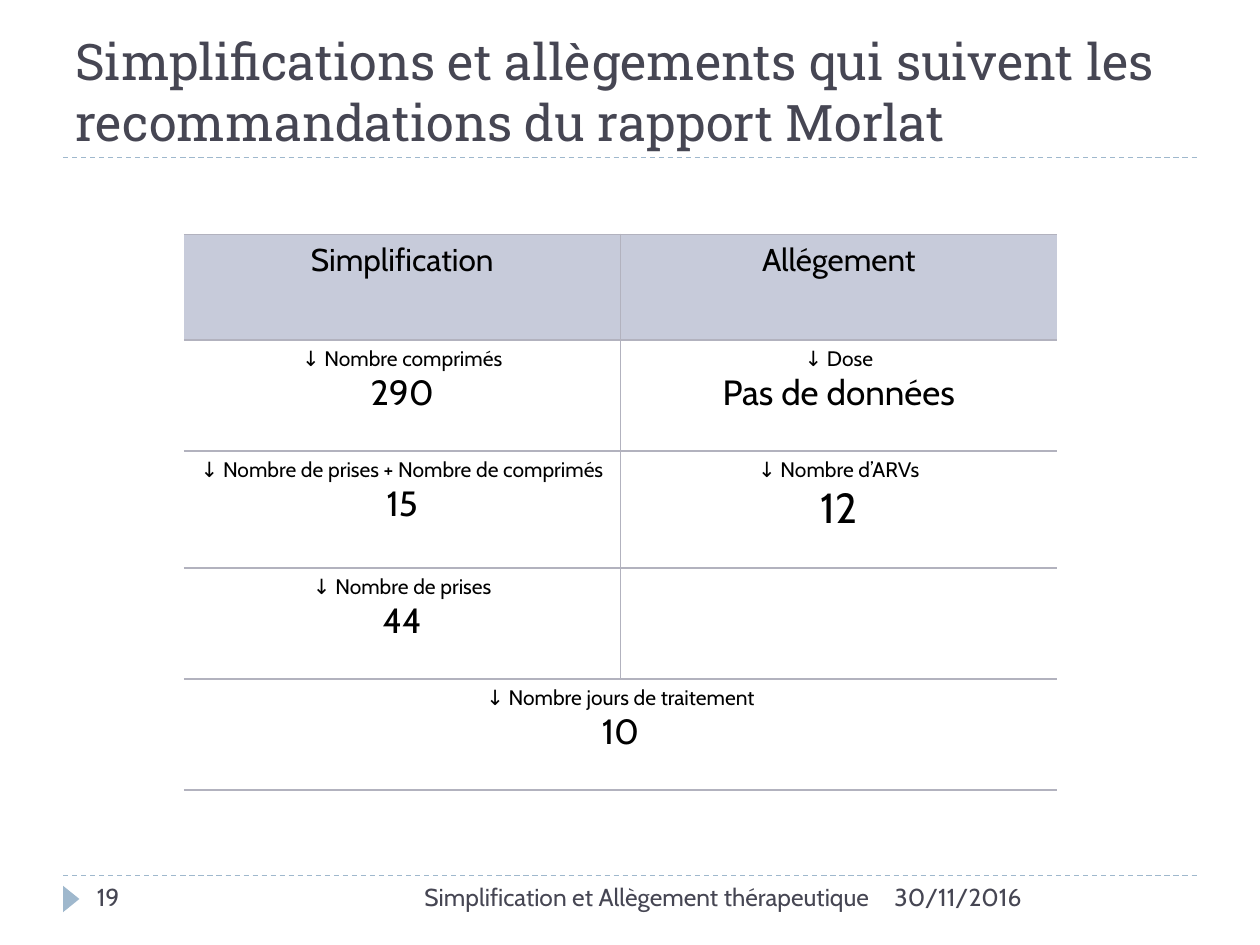
from lxml.etree import SubElement
from pptx import Presentation
from pptx.dml.color import RGBColor
from pptx.enum.dml import MSO_LINE
from pptx.enum.shapes import MSO_CONNECTOR, MSO_SHAPE
from pptx.enum.text import MSO_ANCHOR, PP_ALIGN
from pptx.oxml.ns import qn
from pptx.util import Inches, Pt

INK = RGBColor(0x46, 0x46, 0x53)
BLACK = RGBColor(0x00, 0x00, 0x00)
ACCENT = RGBColor(0x9F, 0xB8, 0xCD)
HEADER_FILL = RGBColor(0xC7, 0xCB, 0xDA)
BORDER = RGBColor(0xB2, 0xB2, 0xBE)

TITLE = "Simplifications et allègements qui suivent les recommandations du rapport Morlat"
FOOTERS = [
    ("30/11/2016", 7, 2.5, PP_ALIGN.LEFT),
    ("Simplification et Allègement thérapeutique", 3.17, 3.83, PP_ALIGN.RIGHT),
    ("19", 0.67, 2.17, PP_ALIGN.LEFT),
]
HEADERS = ["Simplification", "Allégement"]
RESULTS = [
    [("↓ Nombre comprimés", "290", 20), ("↓ Dose", "Pas de données", 20)],
    [("↓ Nombre de prises + Nombre de comprimés", "15", 20), ("↓ Nombre d’ARVs", "12", 24)],
    [("↓ Nombre de prises", "44", 20), None],
    [("↓ Nombre jours de traitement", "10", 20), None],
]
ROW_HEIGHTS = [0.84, 0.88, 0.93, 0.88, 0.88]
COLUMN_WIDTH = 3.465
FOOTER_TOP = 6.95
RULE_TOPS = [FOOTER_TOP, 1.25]


def write(paragraph, text, size=14, font="Cabin", color=INK, align=PP_ALIGN.LEFT):
    paragraph.alignment = align
    run = paragraph.add_run()
    run.text = text
    run.font.size = Pt(size)
    run.font.name = font
    run.font.color.rgb = color


def add_frame(slide, left, top, width, height, anchor=MSO_ANCHOR.TOP):
    frame = slide.shapes.add_textbox(
        Inches(left), Inches(top), Inches(width), Inches(height)
    ).text_frame
    frame.word_wrap = True
    frame.vertical_anchor = anchor
    return frame


def add_rule(slide, top):
    rule = slide.shapes.add_connector(
        MSO_CONNECTOR.STRAIGHT, Inches(0.5), Inches(top), Inches(9.5), Inches(top)
    )
    rule.line.color.rgb = ACCENT
    rule.line.width = Pt(0.75)
    rule.line.dash_style = MSO_LINE.DASH
    SubElement(rule._element.spPr, qn("a:effectLst"))


def set_borders(cell, visible):
    properties = cell._tc.get_or_add_tcPr()
    for side in "LRTB":
        edge = SubElement(properties, qn(f"a:ln{side}"), w=str(Pt(1)))
        if side in visible:
            fill = SubElement(edge, qn("a:solidFill"))
            SubElement(fill, qn("a:srgbClr"), val=str(BORDER))
        else:
            SubElement(edge, qn("a:noFill"))


def add_results(slide):
    table = slide.shapes.add_table(
        len(ROW_HEIGHTS), len(HEADERS), Inches(1.46), Inches(1.86),
        Inches(COLUMN_WIDTH * len(HEADERS)), Inches(sum(ROW_HEIGHTS)),
    ).table
    table.first_row = False
    table.horz_banding = False
    for column in table.columns:
        column.width = Inches(COLUMN_WIDTH)
    for row, height in zip(table.rows, ROW_HEIGHTS):
        row.height = Inches(height)

    last_row = len(RESULTS)
    contents = [[[(header, 18)] for header in HEADERS]]
    for results in RESULTS:
        contents.append([[(r[0], 12), (r[1], r[2])] if r else [] for r in results])

    for row_index, row in enumerate(contents):
        for column_index, lines in enumerate(row):
            cell = table.cell(row_index, column_index)
            divider = "" if row_index == last_row else "RL"[column_index]
            set_borders(cell, "TB" + divider)
            if row_index == 0:
                cell.fill.solid()
                cell.fill.fore_color.rgb = HEADER_FILL
            else:
                cell.fill.background()
            frame = cell.text_frame
            for index, (text, size) in enumerate(lines):
                paragraph = frame.add_paragraph() if index else frame.paragraphs[0]
                write(paragraph, text, size=size, color=BLACK, align=PP_ALIGN.CENTER)
    table.cell(last_row, 0).merge(table.cell(last_row, 1))


def main():
    deck = Presentation()
    deck.slide_width, deck.slide_height = Inches(10), Inches(7.5)
    slide = deck.slides.add_slide(deck.slide_layouts[6])

    for top in RULE_TOPS:
        add_rule(slide, top)
    marker = slide.shapes.add_shape(
        MSO_SHAPE.ISOSCELES_TRIANGLE, Inches(0.46), Inches(7.07), Inches(0.21), Inches(0.13)
    )
    marker.rotation = 90
    marker.shadow.inherit = False
    marker.fill.solid()
    marker.fill.fore_color.rgb = ACCENT
    marker.line.fill.background()

    title = add_frame(slide, 0.5, 0.17, 9, 1.08, anchor=MSO_ANCHOR.BOTTOM)
    write(title.paragraphs[0], TITLE, size=28.8, font="Roboto Slab")
    for text, left, width, align in FOOTERS:
        footer = add_frame(slide, left, FOOTER_TOP, width, 0.4)
        write(footer.paragraphs[0], text, align=align)
    add_results(slide)
    deck.save("out.pptx")


if __name__ == "__main__":
    main()
